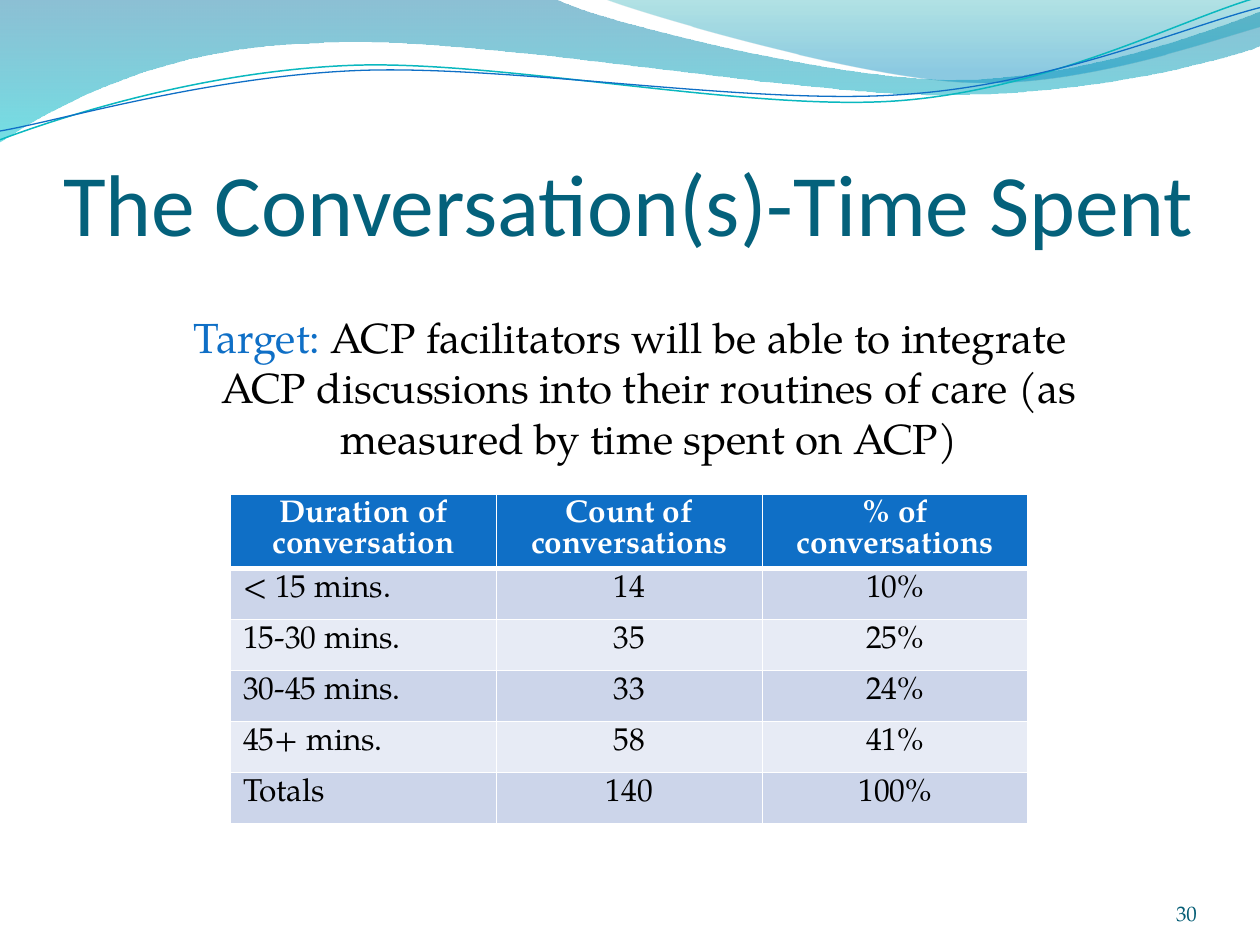
import math

from lxml import etree
from pptx import Presentation
from pptx import util as u
from pptx.dml.color import RGBColor
from pptx.enum import text
from pptx.oxml import ns

COLORS = {
    "title": "04617B", "accent": "0F6FC6", "teal": "0AB8BF", "number": "045D75",
    "black": "000000", "white": "FFFFFF", "band": "CCD5EA", "light": "E7EBF5",
    "deep": "0074A1", "aqua": "00C6CF", "sea": "00A1A9", "sky": "008BBF",
}
SERIF = "TeX Gyre Pagella"
LINE_TURN = 357.3

BANDS = [
    ((-0.01, -0.01, 10.02, 1.14),
     [[(0, 0)], [(4.4, -0.01)],
      [(4.76, 0.17), (6.64, 0.63), (7.58, 0.63)],
      [(8.53, 0.63), (9.58, 0.26), (10, 0.09)],
      [(10.01, 0.36)],
      [(9.83, 0.44), (8.7, 0.76), (7.46, 0.75)],
      [(6.22, 0.75), (3.82, 0.28), (2.57, 0.34)],
      [(1.29, 0.36), (0.46, 0.83), (-0.01, 1.13)],
      [(0, 0)]],
     [(0, "deep", 45), (1, "aqua", 55)]),
    ((4.79, -0.01, 5.21, 0.7),
     [[(4.79, -0.01)],
      [(5.09, 0.11), (6.82, 0.62), (7.69, 0.65)],
      [(8.56, 0.69), (9.61, 0.32), (10, 0.21)],
      [(10, 0)], [(4.79, -0.01)]],
     [(0, "sea", 30), (0.8, "sky", 45)]),
]
LINES = [
    ((-0.02, 0.22, 10.02, 0.71),
     [[(0, 1.11)],
      [(0.48, 0.93), (1.58, 0.57), (2.77, 0.52)],
      [(3.95, 0.47), (5.93, 0.89), (7.13, 0.8)],
      [(8.33, 0.71), (9.38, 0.15), (9.98, -0.02)]], "teal", 0.85),
    ((-0.02, 0.3, 10.03, 0.58),
     [[(0, 1.04)],
      [(0.47, 0.96), (1.64, 0.61), (2.83, 0.56)],
      [(4.03, 0.51), (5.97, 0.84), (7.17, 0.75)],
      [(8.36, 0.67), (9.41, 0.21), (10, 0.06)]], "accent", 0.75),
]
ROWS = [
    ("Duration of conversation", "Count of conversations", "% of conversations"),
    ("< 15 mins.", "14", "10%"),
    ("15-30 mins.", "35", "25%"),
    ("30-45 mins.", "33", "24%"),
    ("45+ mins.", "58", "41%"),
    ("Totals", "140", "100%"),
]


def inches(*lengths):
    return [u.Inches(length) for length in lengths]


def color(name):
    return RGBColor.from_string(COLORS[name])


def set_font(font, name, size, shade, bold=False):
    font.name, font.size, font.bold = name, u.Pt(size), bold
    font.color.rgb = color(shade)


def to_local(point, box, turn):
    left, top, width, height = box
    angle = math.radians(-turn)
    dx, dy = point[0] - left - width / 2, point[1] - top - height / 2
    return inches(dx * math.cos(angle) - dy * math.sin(angle) + width / 2,
                  dx * math.sin(angle) + dy * math.cos(angle) + height / 2)


def draw_outline(page, box, segments, turn=0):
    builder = page.shapes.build_freeform()
    builder.add_line_segments([(1, 1)], close=turn == 0)
    shape = builder.convert_to_shape()
    shape.left, shape.top, shape.width, shape.height = inches(*box)
    shape.rotation = turn
    shape.shadow.inherit = False
    outline = next(shape._element.iter(ns.qn("a:path")))
    outline.set("w", str(shape.width))
    outline.set("h", str(shape.height))
    for step in list(outline):
        outline.remove(step)
    for i, segment in enumerate(segments):
        kind = "cubicBezTo" if len(segment) == 3 else "lnTo" if i else "moveTo"
        step = etree.SubElement(outline, ns.qn("a:" + kind))
        for point in segment:
            x, y = to_local(point, box, turn)
            etree.SubElement(step, ns.qn("a:pt"), x=str(x), y=str(y))
    if turn == 0:
        etree.SubElement(outline, ns.qn("a:close"))
    return shape


def add_waves(page):
    for box, segments, stops in BANDS:
        band = draw_outline(page, box, segments)
        band.line.fill.background()
        band.fill.gradient()
        band.fill.gradient_angle = 270
        for stop, (position, name, _) in zip(band.fill.gradient_stops, stops):
            stop.position = position
            stop.color.rgb = color(name)
        shades = band._element.spPr.iter(ns.qn("a:srgbClr"))
        for shade, (_, _, opacity) in zip(shades, stops):
            etree.SubElement(shade, ns.qn("a:alpha"), val=str(opacity * 1000))
    for box, segments, name, width in LINES:
        line = draw_outline(page, box, segments, LINE_TURN)
        line.fill.background()
        line.line.color.rgb = color(name)
        line.line.width = u.Pt(width)


def place(page, shape, box):
    shape.left, shape.top, shape.width, shape.height = box
    page.shapes._spTree.append(shape._element)
    frame = shape.text_frame
    frame.word_wrap = True
    frame.auto_size = text.MSO_AUTO_SIZE.NONE
    return frame


def set_insets(frame, top):
    frame.margin_left = frame.margin_right = frame.margin_bottom = 0
    frame.margin_top = u.Inches(top)
    frame.vertical_anchor = text.MSO_ANCHOR.BOTTOM


def add_title(page, box):
    frame = place(page, page.shapes.title, box)
    set_insets(frame, 0.05)
    para = frame.paragraphs[0]
    para.text = "The Conversation(s)-Time Spent"
    para.alignment = text.PP_ALIGN.LEFT
    set_font(para.font, "Calibri", 50, "title")


def add_target(page, box):
    frame = place(page, page.placeholders[1], box)
    para = frame.paragraphs[0]
    para.alignment = text.PP_ALIGN.CENTER
    for words, name in (
        ("Target:", "accent"),
        (" ACP facilitators will be able to integrate ACP discussions into "
         "their routines of care (as measured by time spent on ACP)", "black"),
    ):
        span = para.add_run()
        span.text = words
        set_font(span.font, SERIF, 24, name)
    props = para._p.get_or_add_pPr()
    props.set("marL", str(u.Inches(0.3)))
    props.set("indent", str(u.Inches(-0.3)))
    etree.SubElement(props, ns.qn("a:buNone"))


def set_borders(cell, bottom):
    props = cell._tc.get_or_add_tcPr()
    sides = (("lnL", 1), ("lnR", 1), ("lnT", 1), ("lnB", bottom))
    for i, (side, width) in enumerate(sides):
        border = etree.Element(ns.qn("a:" + side), w=str(u.Pt(width)))
        fill = etree.SubElement(border, ns.qn("a:solidFill"))
        etree.SubElement(fill, ns.qn("a:srgbClr"), val=COLORS["white"])
        props.insert(i, border)


def add_durations(page, box):
    table = page.shapes.add_table(len(ROWS), len(ROWS[0]), *box).table
    for i, values in enumerate(ROWS):
        header = i == 0
        fill = "accent" if header else "band" if i % 2 else "light"
        for j, value in enumerate(values):
            cell = table.cell(i, j)
            cell.fill.solid()
            cell.fill.fore_color.rgb = color(fill)
            if header:
                set_borders(cell, 3)
            para = cell.text_frame.paragraphs[0]
            para.text = value
            centred = header or j > 0
            para.alignment = text.PP_ALIGN.CENTER if centred else text.PP_ALIGN.LEFT
            set_font(para.font, SERIF, 18, "white" if header else "black", header)


def add_page_number(page, box):
    frame = page.shapes.add_textbox(*box).text_frame
    frame.word_wrap = True
    set_insets(frame, 0)
    para = frame.paragraphs[0]
    para.text = "30"
    para.alignment = text.PP_ALIGN.RIGHT
    set_font(para.font, SERIF, 12, "number")


def main():
    deck = Presentation()
    deck.slide_width, deck.slide_height = inches(10, 7.5)
    page = deck.slides.add_slide(deck.slide_layouts[1])
    page.background.fill.solid()
    page.background.fill.fore_color.rgb = color("white")
    add_waves(page)
    add_title(page, inches(0.5, 0.77, 9.08, 1.25))
    add_target(page, inches(1.25, 2.42, 7.5, 1.33))
    add_durations(page, inches(1.83, 3.92, 6.33, 2.43))
    add_page_number(page, inches(8.67, 6.95, 0.83, 0.4))
    deck.save("out.pptx")


if __name__ == "__main__":
    main()
